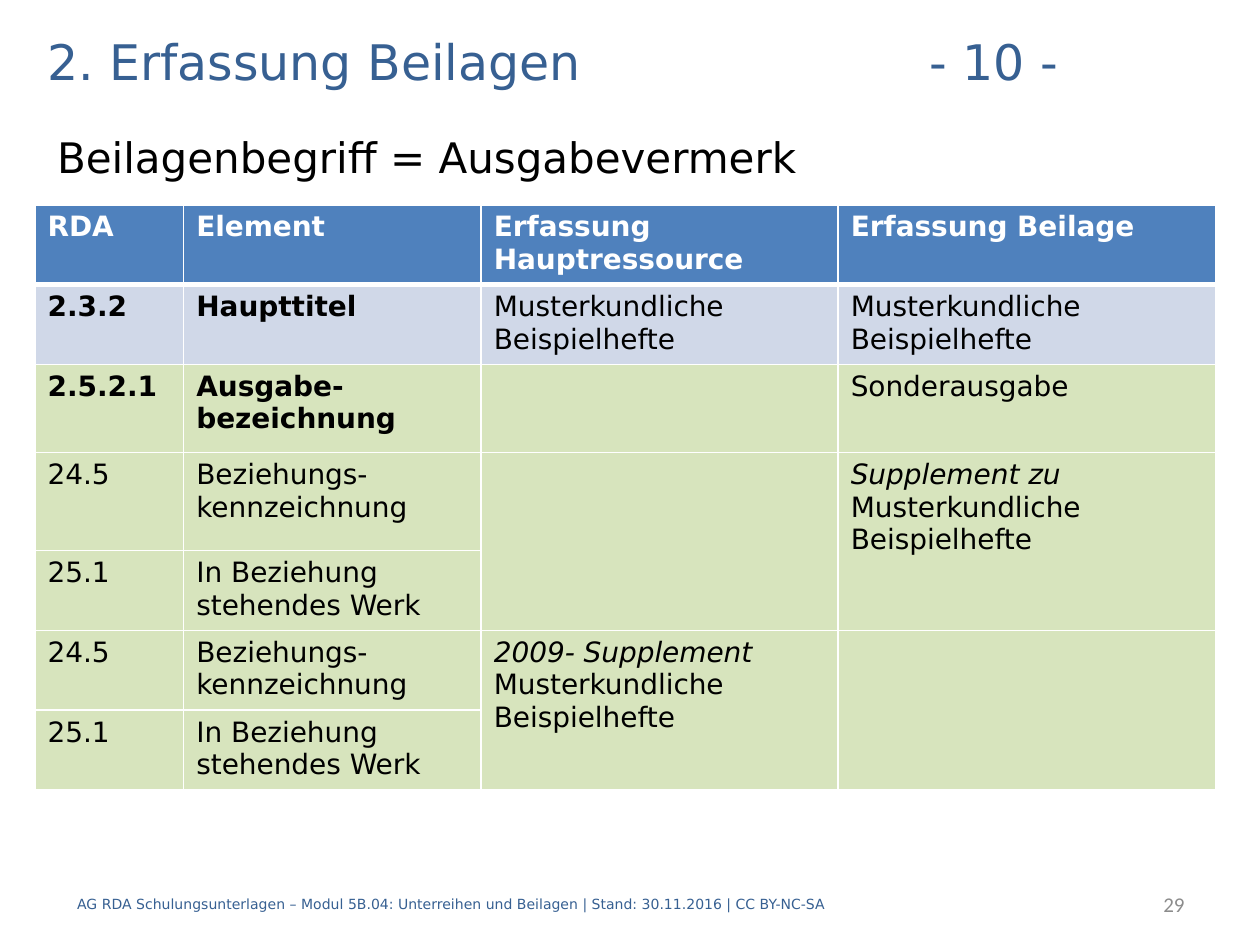
from lxml import etree
from pptx import Presentation
from pptx.dml.color import RGBColor
from pptx.enum.text import MSO_ANCHOR, PP_ALIGN
from pptx.oxml.ns import qn
from pptx.util import Pt

MIDDLE, TOP = MSO_ANCHOR.MIDDLE, MSO_ANCHOR.TOP
LEFT, RIGHT = PP_ALIGN.LEFT, PP_ALIGN.RIGHT

WHITE = RGBColor(0xFF, 0xFF, 0xFF)
BLACK = RGBColor(0, 0, 0)
DARK_BLUE = RGBColor(0x37, 0x60, 0x92)
GREY = RGBColor(0x8C, 0x8C, 0x8C)
HEADER_BLUE = RGBColor(0x4F, 0x81, 0xBD)
PALE_BLUE = RGBColor(0xD0, 0xD8, 0xE8)
PALE_GREEN = RGBColor(0xD7, 0xE4, 0xBD)
FONT, NUMBER_FONT = "DejaVu Sans", "Calibri"

TITLE = "2. Erfassung Beilagen\t\t\t- 10 -"
TITLE_TABS = (360, 432, 504)
SUBTITLE = "Beilagenbegriff = Ausgabevermerk"
FOOTER = ("AG RDA Schulungsunterlagen – Modul 5B.04: Unterreihen und Beilagen"
          " | Stand: 30.11.2016 | CC BY-NC-SA")
PAGE_NUMBER = "29"

JOURNAL = "Musterkundliche Beispielhefte"
MARKER = ("24.5", "Beziehungs-kennzeichnung")
RELATED_WORK = ("25.1", "In Beziehung stehendes Werk", "", "")
# A cell is a text, or a pair of an italic lead-in and a plain text.
ROWS = [
    ("RDA", "Element", "Erfassung Hauptressource", "Erfassung Beilage"),
    ("2.3.2", "Haupttitel", JOURNAL, JOURNAL),
    ("2.5.2.1", "Ausgabe-bezeichnung", "", "Sonderausgabe"),
    (*MARKER, "", ("Supplement zu ", JOURNAL)),
    RELATED_WORK,
    (*MARKER, ("2009- Supplement ", JOURNAL), ""),
    RELATED_WORK,
]
ROW_FILLS = [HEADER_BLUE, PALE_BLUE] + [PALE_GREEN] * 5
BOLD_COLUMNS = [4, 2, 2, 0, 0, 0, 0]
COLUMN_WIDTHS = (85, 170, 204, 215.5)
ROW_HEIGHTS = (45.2, 45.2, 50.4, 56, 44.6, 45.2, 45.2)
TABLE_LEFT, TABLE_TOP = 20, 117
MERGE_ROWS, MERGE_COLUMNS = (3, 5), (2, 3)


def add_run(paragraph, text, size, color, font=FONT, bold=False, italic=False):
    run = paragraph.add_run()
    run.text = text
    run.font.name = font
    run.font.size = Pt(size)
    run.font.bold = bold
    run.font.italic = italic
    run.font.color.rgb = color


def add_text(slide, box, text, size, color, font=FONT, anchor=MIDDLE, align=LEFT):
    shape = slide.shapes.add_textbox(*(Pt(length) for length in box))
    frame = shape.text_frame
    frame.word_wrap = True
    frame.vertical_anchor = anchor
    paragraph = frame.paragraphs[0]
    paragraph.alignment = align
    add_run(paragraph, text, size, color, font)
    return paragraph


def set_tabs(paragraph, positions):
    properties = paragraph._p.get_or_add_pPr()
    tab_list = etree.SubElement(properties, qn("a:tabLst"))
    for position in positions:
        etree.SubElement(tab_list, qn("a:tab"), pos=str(Pt(position)), algn="l")


def set_borders(cell, bottom_width):
    properties = cell._tc.get_or_add_tcPr()
    for side, width in (("L", 1), ("R", 1), ("T", 1), ("B", bottom_width)):
        line = etree.SubElement(properties, qn(f"a:ln{side}"), w=str(Pt(width)))
        fill = etree.SubElement(line, qn("a:solidFill"))
        etree.SubElement(fill, qn("a:srgbClr"), val=str(WHITE))


def fill_cell(cell, content, color, fill, bold, bottom_width):
    set_borders(cell, bottom_width)
    cell.fill.solid()
    cell.fill.fore_color.rgb = fill
    lead, text = content if isinstance(content, tuple) else ("", content)
    paragraph = cell.text_frame.paragraphs[0]
    if lead:
        add_run(paragraph, lead, 16, color, italic=True)
    if text:
        add_run(paragraph, text, 16, color, bold=bold)
    else:
        paragraph.font.size = Pt(16)


def add_comparison_table(slide):
    table = slide.shapes.add_table(
        len(ROWS), len(COLUMN_WIDTHS), Pt(TABLE_LEFT), Pt(TABLE_TOP),
        Pt(sum(COLUMN_WIDTHS)), Pt(sum(ROW_HEIGHTS))).table
    for column, width in zip(table.columns, COLUMN_WIDTHS):
        column.width = Pt(width)
    for row_index, contents in enumerate(ROWS):
        table.rows[row_index].height = Pt(ROW_HEIGHTS[row_index])
        is_header = row_index == 0
        for column_index, content in enumerate(contents):
            fill_cell(table.cell(row_index, column_index), content,
                      WHITE if is_header else BLACK, ROW_FILLS[row_index],
                      column_index < BOLD_COLUMNS[row_index],
                      3 if is_header else 1)
    for row_index in MERGE_ROWS:
        for column_index in MERGE_COLUMNS:
            table.cell(row_index, column_index).merge(
                table.cell(row_index + 1, column_index))


def main():
    presentation = Presentation()
    presentation.slide_width, presentation.slide_height = Pt(720), Pt(540)
    slide = presentation.slides.add_slide(presentation.slide_layouts[6])

    title = add_text(slide, (20, 14.5, 680, 40), TITLE, 28, DARK_BLUE)
    set_tabs(title, TITLE_TABS)
    subtitle = add_text(slide, (25.5, 71.5, 680, 67.5), SUBTITLE, 24, BLACK, anchor=TOP)
    subtitle.space_before = Pt(4.8)
    add_text(slide, (37, 502, 601, 28.8), FOOTER, 8, DARK_BLUE)
    add_text(slide, (569.5, 502, 114.5, 28.8), PAGE_NUMBER, 12, GREY,
             font=NUMBER_FONT, align=RIGHT)
    add_comparison_table(slide)
    presentation.save("out.pptx")


if __name__ == "__main__":
    main()
